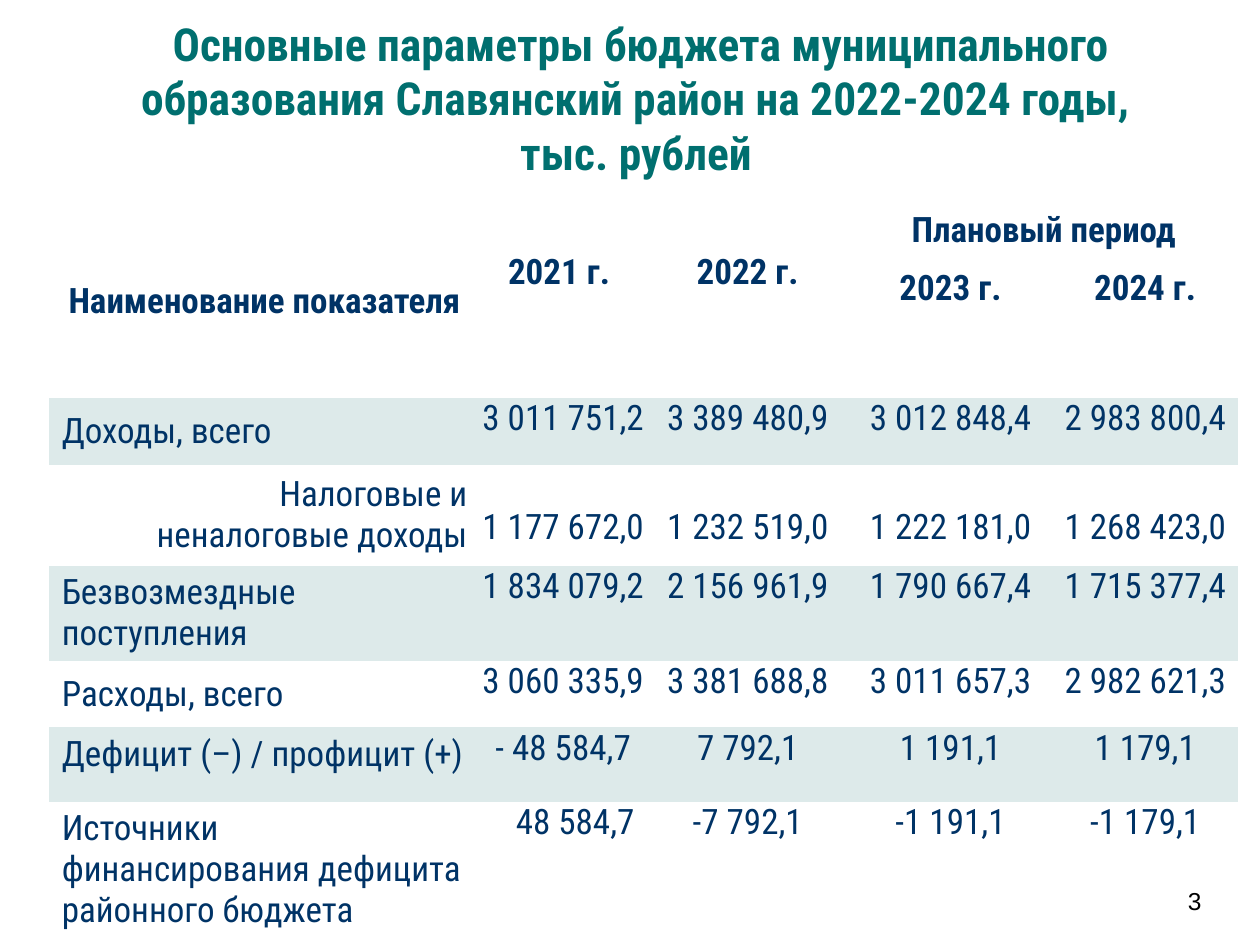
from pptx import Presentation
from pptx.dml.color import RGBColor
from pptx.enum.text import MSO_ANCHOR, PP_ALIGN
from pptx.util import Inches, Pt

LEFT, MID, RIGHT = PP_ALIGN.LEFT, PP_ALIGN.CENTER, PP_ALIGN.RIGHT
TOP, CENTER = MSO_ANCHOR.TOP, MSO_ANCHOR.MIDDLE
NAVY = RGBColor(0x00, 0x33, 0x66)
TEAL = RGBColor(0x00, 0x6F, 0x6F)
BLACK = RGBColor(0x00, 0x00, 0x00)
WHITE = RGBColor(0xFF, 0xFF, 0xFF)
MINT = RGBColor(0xDD, 0xEA, 0xEA)
FONT = "Roboto Condensed"
PLAIN = "{2D5ABB26-0587-4C30-8999-92F81FD0307C}"

COLS = [3.42, 1.32, 1.61, 1.61, 1.48]
ROWS = [0.46, 1.08, 0.53, 0.8, 0.75, 0.53, 0.59, 1.08]
LINE = 0.33
WIDE = (0.1, 0.05, 0.1, 0.05)
LOW = (0.1, 0.05 + LINE, 0.1, 0.05)
SLIM = (0, 0, 0, 0)

HEADS = [
    (0, 0, "Наименование показателя", WIDE, CENTER),
    (0, 1, "2021 г. ", LOW, TOP),
    (0, 2, "2022 г.", LOW, TOP),
    (0, 3, "Плановый период", WIDE, TOP),
    (1, 3, "2023 г.", WIDE, TOP),
    (1, 4, "2024 г.", WIDE, TOP),
]
DATA = [
    ("Доходы, всего", "3 011 751,2", "3 389 480,9", "3 012 848,4", "2 983 800,4"),
    ("Налоговые и неналоговые доходы", "1 177 672,0", "1 232 519,0", "1 222 181,0", "1 268 423,0"),
    ("Безвозмездные поступления", "1 834 079,2", "2 156 961,9", "1 790 667,4", "1 715 377,4"),
    ("Расходы, всего", "3 060 335,9", "3 381 688,8", "3 011 657,3", "2 982 621,3"),
    ("Дефицит (–) / профицит (+)", "- 48 584,7", "7 792,1", "1 191,1", "1 179,1"),
    ("Источники финансирования дефицита районного бюджета", "48 584,7", "-7 792,1", "-1 191,1", "-1 179,1"),
]


def write(frame, lines, size, color, align=LEFT, bold=False, name=FONT):
    frame.text = "\n".join(lines)
    for para in frame.paragraphs:
        para.alignment = align
        font = para.font
        font.name, font.size, font.bold = name, Pt(size), bold
        font.color.rgb = color


def add_text(slide, box, lines, size, color, anchor=TOP, **style):
    frame = slide.shapes.add_textbox(*map(Inches, box)).text_frame
    frame.word_wrap = True
    frame.vertical_anchor = anchor
    write(frame, lines, size, color, **style)


def set_cell(cell, text, inset, anchor=TOP, align=MID, bold=False):
    cell.margin_left, cell.margin_top, cell.margin_right, cell.margin_bottom = map(Inches, inset)
    cell.vertical_anchor = anchor
    write(cell.text_frame, [text], 20, NAVY, align, bold)


def add_grid(slide):
    shape = slide.shapes.add_table(
        len(ROWS), len(COLS), Inches(0.39), Inches(1.62), Inches(sum(COLS)), Inches(sum(ROWS))
    )
    table = shape.table
    table.first_row = table.horz_banding = False
    table._tbl.tblPr[0].text = PLAIN
    for col, width in zip(table.columns, COLS):
        col.width = Inches(width)
    for i, (row, height) in enumerate(zip(table.rows, ROWS)):
        row.height = Inches(height)
        for cell in row.cells:
            cell.fill.solid()
            cell.fill.fore_color.rgb = MINT if i > 1 and i % 2 == 0 else WHITE
    for col in range(3):
        table.cell(0, col).merge(table.cell(1, col))
    table.cell(0, 3).merge(table.cell(0, 4))
    return table


def fill_grid(table):
    for row, col, text, inset, anchor in HEADS:
        set_cell(table.cell(row, col), text, inset, anchor, bold=True)
    for i, (label, *values) in enumerate(DATA):
        row = i + 2
        set_cell(table.cell(row, 0), label, WIDE, CENTER if i < 4 else TOP, LEFT)
        for col, value in enumerate(values, 1):
            set_cell(table.cell(row, col), value, SLIM)
    sub = table.cell(3, 0)
    sub.margin_left = Inches(0.6)
    sub.text_frame.paragraphs[0].alignment = RIGHT
    for col in range(1, len(COLS)):
        table.cell(3, col).margin_top = Inches(LINE)
    table.cell(7, 1).margin_left = Inches(0.19)


def main():
    deck = Presentation()
    deck.slide_width, deck.slide_height = Inches(10), Inches(7.5)
    slide = deck.slides.add_slide(deck.slide_layouts[6])
    fill_grid(add_grid(slide))
    title = [
        "Основные параметры бюджета муниципального образования Славянский район на 2022-2024 годы, ",
        "тыс. рублей ",
    ]
    add_text(slide, (0.35, 0.07, 9.48, 1.41), title, 26, TEAL, CENTER, align=MID, bold=True)
    add_text(slide, (9.33, 6.98, 0.51, 0.34), ["3"], 14, BLACK, name="Arial")
    deck.save("out.pptx")


if __name__ == "__main__":
    main()
